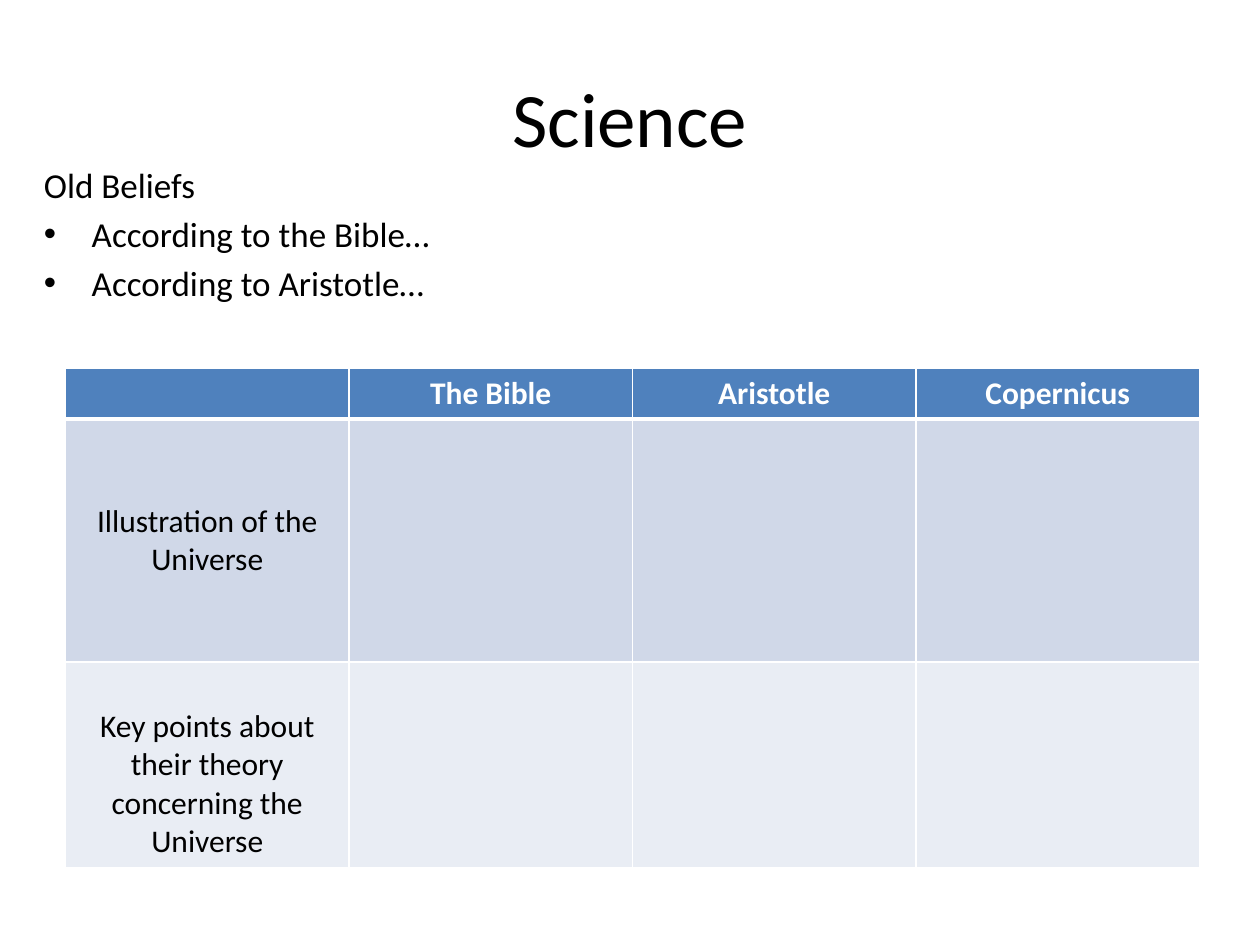
"""Build the Science slide comparing beliefs about the universe."""
from lxml import etree
from pptx import Presentation
from pptx.dml.color import RGBColor
from pptx.enum.text import MSO_ANCHOR, PP_ALIGN
from pptx.oxml.ns import qn
from pptx.util import Inches, Pt

MID, LOW, TOP = MSO_ANCHOR.MIDDLE, MSO_ANCHOR.BOTTOM, MSO_ANCHOR.TOP
LEFT, CENTER = PP_ALIGN.LEFT, PP_ALIGN.CENTER

FONT = "Calibri"
COLORS = {"text": "000000", "white": "FFFFFF", "head": "4F81BD",
          "dark": "D0D8E8", "light": "E9EDF4"}
TITLE = "Science"
BELIEFS = [("Old Beliefs", False),
           ("According to the Bible…", True),
           ("According to Aristotle…", True)]
ROWS = [
    (["", "The Bible", "Aristotle", "Copernicus"], "head", 0.4, TOP),
    (["Illustration of the Universe", "", "", ""], "dark", 1.93, MID),
    (["Key points about their theory concerning the Universe", "", "", ""],
     "light", 1.63, LOW),
]
COL = 2.25


def rgb(name):
    return RGBColor.from_string(COLORS[name])


def style(para, size, color="text", align=LEFT, bold=False):
    para.alignment = align
    font = para.font
    font.name, font.size, font.bold = FONT, Pt(size), bold
    font.color.rgb = rgb(color)


def add_box(slide, left, top, width, height, anchor=TOP):
    box = slide.shapes.add_textbox(*map(Inches, (left, top, width, height)))
    frame = box.text_frame
    frame.word_wrap, frame.vertical_anchor = True, anchor
    return frame


def add_bullet(para):
    props = para._p.get_or_add_pPr()
    props.set("marL", str(Inches(0.38)))
    props.set("indent", str(Inches(-0.38)))
    font = etree.Element(qn("a:buFont"), typeface="Arial")
    mark = etree.Element(qn("a:buChar"), char="•")
    spot = props.find(qn("a:defRPr"))
    spot.addprevious(font)
    spot.addprevious(mark)


def add_edges(cell, head):
    props = cell._tc.get_or_add_tcPr()
    for spot, side in enumerate(("lnL", "lnR", "lnT", "lnB")):
        thick = (head and side == "lnB") or (cell.is_below and side == "lnT") \
            if hasattr(cell, "is_below") else head and side == "lnB"
        line = etree.Element(qn(f"a:{side}"), w=str(Pt(3 if thick else 1)))
        fill = etree.SubElement(line, qn("a:solidFill"))
        etree.SubElement(fill, qn("a:srgbClr"), val=COLORS["white"])
        props.insert(spot, line)


def add_grid(slide):
    count = len(ROWS[0][0])
    total = sum(row[2] for row in ROWS)
    table = slide.shapes.add_table(
        len(ROWS), count, Inches(0.52), Inches(2.92),
        Inches(COL * count), Inches(total)).table
    for i, (texts, shade, height, anchor) in enumerate(ROWS):
        table.rows[i].height = Inches(height)
        head = i == 0
        for j, text in enumerate(texts):
            cell = table.cell(i, j)
            cell.text, cell.vertical_anchor = text, anchor
            cell.fill.solid()
            cell.fill.fore_color.rgb = rgb(shade)
            style(cell.text_frame.paragraphs[0], 18,
                  "white" if head else "text", CENTER, head)
            add_edges(cell, head)


def main():
    deck = Presentation()
    deck.slide_width, deck.slide_height = Inches(10), Inches(7.5)
    slide = deck.slides.add_slide(deck.slide_layouts[6])
    add_grid(slide)

    frame = add_box(slide, 0.25, 1.25, 9.5, 1.58)
    for i, (text, bullet) in enumerate(BELIEFS):
        para = frame.add_paragraph() if i else frame.paragraphs[0]
        para.text = text
        style(para, 20)
        para.space_before = Pt(4)
        if bullet:
            add_bullet(para)

    para = add_box(slide, 0.5, 0.3, 9, 1.25, MID).paragraphs[0]
    para.text = TITLE
    style(para, 44, align=CENTER)
    deck.save("out.pptx")


if __name__ == "__main__":
    main()
